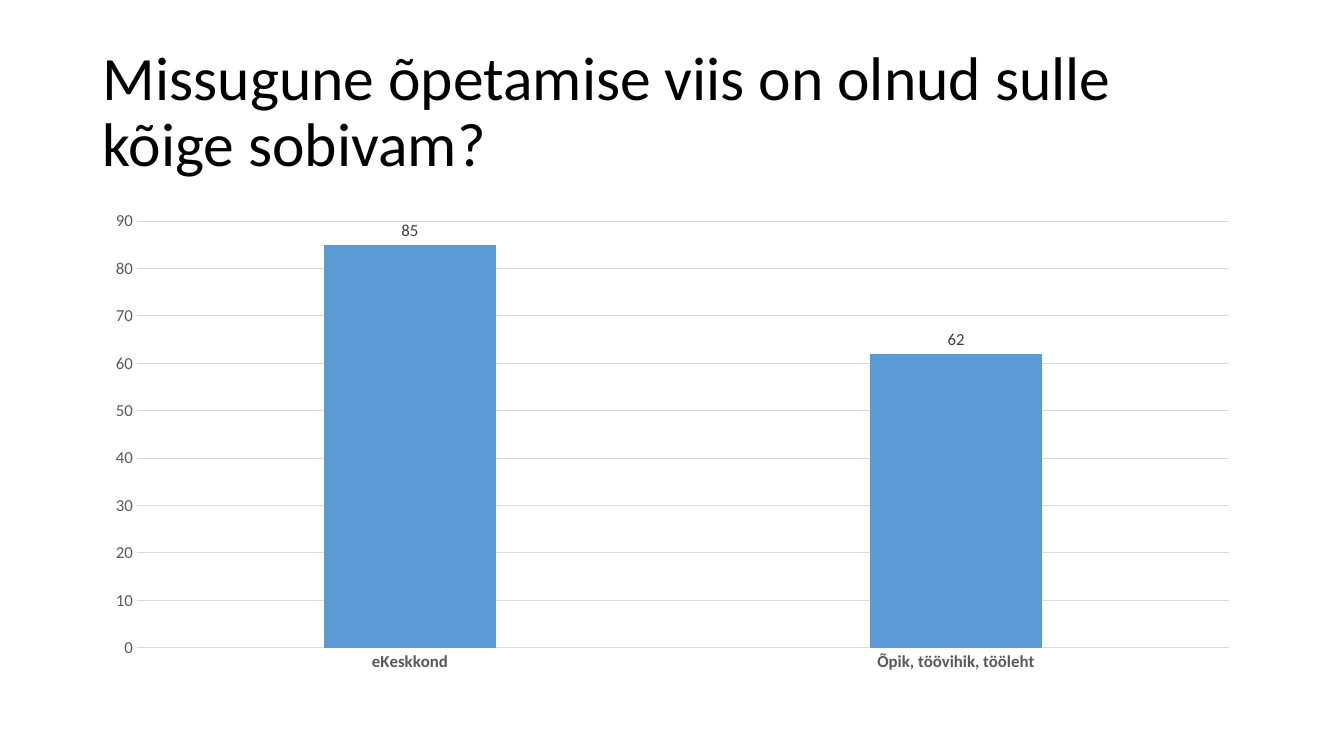
import pptx
import pptx.util
import pptx.chart.data
import pptx.dml.color
import pptx.enum.chart
import pptx.enum.text
from pptx.util import Inches

COLORS = {
    "title": "000000",
    "bar": "5B9BD5",
    "axis": "595959",
    "label": "404040",
    "line": "D9D9D9",
}


class SlideBuilder:
    font_name = "Calibri"

    def __init__(self, prs):
        self.s = prs.slides.add_slide(prs.slide_layouts[5])

    def color(self, name):
        return pptx.dml.color.RGBColor.from_string(COLORS[name])

    def style_font(self, font, size, color, bold=False):
        font.name = self.font_name
        font.size = pptx.util.Pt(size)
        font.bold = bold
        font.color.rgb = self.color(color)

    def style_line(self, line):
        line.color.rgb = self.color("line")
        line.width = pptx.util.Pt(0.75)

    def title(self, text, left, top, width, height):
        sp = self.s.shapes.title
        sp.left, sp.top = Inches(left), Inches(top)
        sp.width, sp.height = Inches(width), Inches(height)
        tf = sp.text_frame
        tf.text = text
        tf.word_wrap = True
        tf.auto_size = pptx.enum.text.MSO_AUTO_SIZE.NONE
        tf.vertical_anchor = pptx.enum.text.MSO_ANCHOR.MIDDLE
        p = tf.paragraphs[0]
        p.alignment = pptx.enum.text.PP_ALIGN.LEFT
        p.line_spacing = 0.9
        p.space_before = pptx.util.Pt(0)
        self.style_font(p.font, 44, "title")

    def column_chart(self, categories, values, left, top, width, height):
        data = pptx.chart.data.CategoryChartData()
        data.categories = categories
        data.add_series("Series 1", values)
        chart = self.s.shapes.add_chart(
            pptx.enum.chart.XL_CHART_TYPE.COLUMN_CLUSTERED,
            Inches(left), Inches(top), Inches(width), Inches(height), data,
        ).chart
        chart.has_legend = False
        chart.has_title = False
        self.style_font(chart.font, 10, "title")

        for axis, bold in ((chart.category_axis, True), (chart.value_axis, False)):
            axis.major_tick_mark = pptx.enum.chart.XL_TICK_MARK.NONE
            axis.minor_tick_mark = pptx.enum.chart.XL_TICK_MARK.NONE
            self.style_font(axis.tick_labels.font, 12, "axis", bold)
        self.style_line(chart.category_axis.format.line)
        axis = chart.value_axis
        axis.minimum_scale, axis.maximum_scale, axis.major_unit = 0, 90, 10
        axis.format.line.fill.background()
        self.style_line(axis.major_gridlines.format.line)

        plot = chart.plots[0]
        plot.gap_width = 219
        plot.overlap = -27
        plot.vary_by_categories = False
        fill = plot.series[0].format.fill
        fill.solid()
        fill.fore_color.rgb = self.color("bar")
        labels = plot.series[0].data_labels
        labels.show_value = True
        labels.position = pptx.enum.chart.XL_LABEL_POSITION.OUTSIDE_END
        self.style_font(labels.font, 12, "label")


def main():
    prs = pptx.Presentation()
    prs.slide_width, prs.slide_height = Inches(13.33), Inches(7.5)
    builder = SlideBuilder(prs)
    builder.title("Missugune õpetamise viis on olnud sulle kõige sobivam?",
                  0.92, 0.4, 11.5, 1.45)
    builder.column_chart(["eKeskkond", "Õpik, töövihik, tööleht"], [85, 62],
                         0.92, 2, 11.5, 4.76)
    prs.save("out.pptx")


if __name__ == "__main__":
    main()
